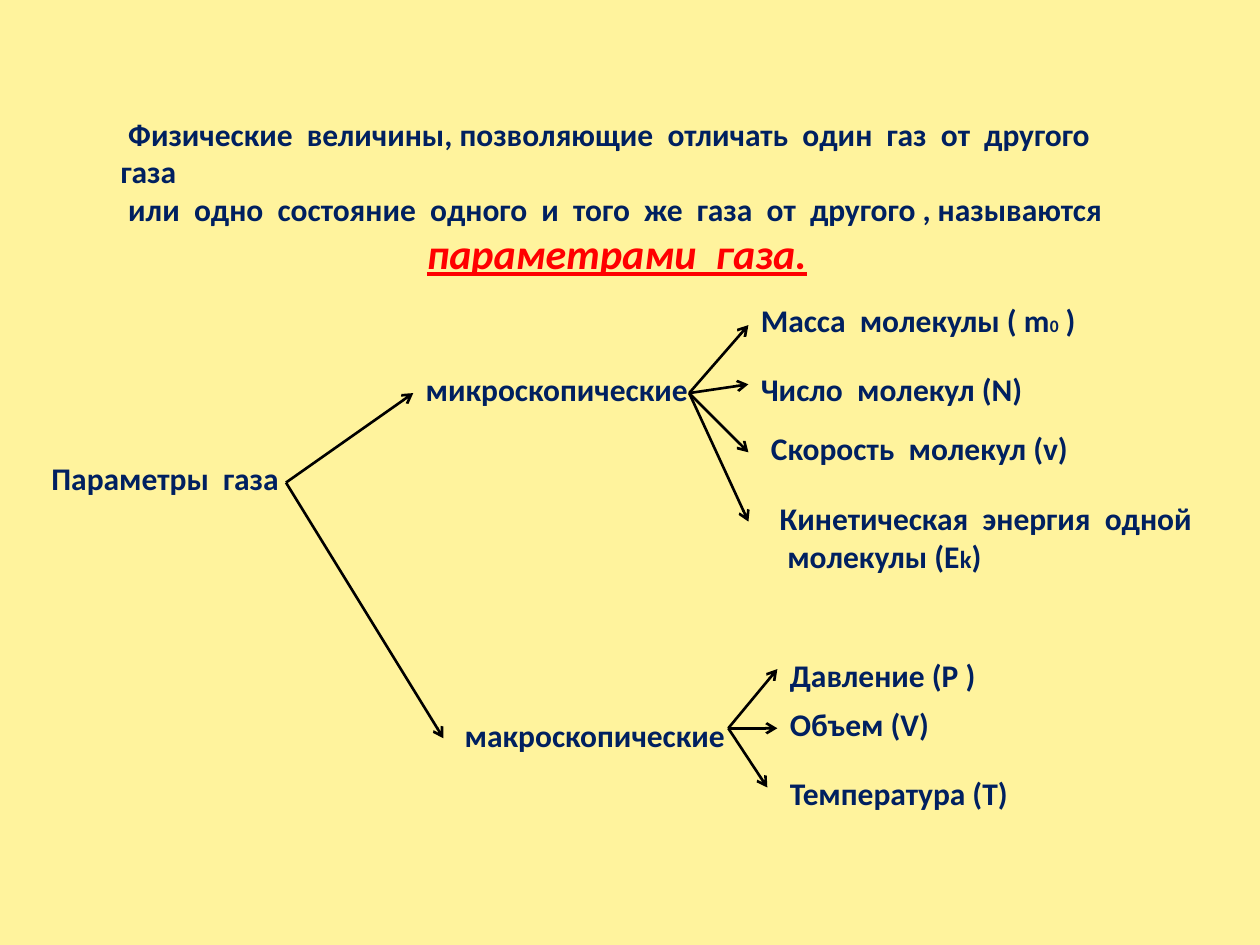
from dataclasses import dataclass

from pptx import Presentation
from pptx import util as u
from pptx.dml.color import RGBColor
from pptx.enum import shapes, text
from pptx.oxml.ns import qn
from lxml import etree


@dataclass(frozen=True)
class Theme:
    font: str = "Calibri"
    background: RGBColor = RGBColor(0xFF, 0xF3, 0x9D)
    ink: RGBColor = RGBColor(0x00, 0x20, 0x60)
    accent: RGBColor = RGBColor(0xFF, 0x00, 0x00)
    line: RGBColor = RGBColor(0, 0, 0)
    body: u.Pt = u.Pt(18)
    term: u.Pt = u.Pt(24)
    index: u.Pt = u.Pt(14)
    small_index: u.Pt = u.Pt(10)
    stroke: u.Pt = u.Pt(1.5)


THEME = Theme()
SPACE = 0.06  # first-line indent, inches
ROW = 0.4     # height of a one-line label, inches


def add_text(slide, box, paragraphs):
    """Each paragraph is a list of (text, size) runs."""
    sp = slide.shapes.add_textbox(*(u.Inches(v) for v in box))
    tf = sp.text_frame
    tf.word_wrap = True
    tf.auto_size = text.MSO_AUTO_SIZE.SHAPE_TO_FIT_TEXT
    for i, runs in enumerate(paragraphs):
        p = tf.paragraphs[0] if i == 0 else tf.add_paragraph()
        p.font.name = THEME.font
        p.font.size = THEME.body
        p.font.bold = True
        p.font.color.rgb = THEME.ink
        for content, size in runs:
            r = p.add_run()
            r.text = content
            if size != THEME.body:
                r.font.size = size
    return tf.paragraphs


def indent(p, first=0, left=0):
    pPr = p._p.get_or_add_pPr()
    pPr.set("marL", str(u.Inches(left)))
    pPr.set("indent", str(u.Inches(first)))


def add_arrow(slide, start, end):
    c = slide.shapes.add_connector(
        shapes.MSO_CONNECTOR.STRAIGHT, *(u.Inches(v) for v in (*start, *end)))
    c.line.color.rgb = THEME.line
    c.line.width = THEME.stroke
    etree.SubElement(c.line._get_or_add_ln(), qn("a:tailEnd"), type="arrow")
    etree.SubElement(c._element.spPr, qn("a:effectLst"))


def add_definition(slide, box):
    first, second, term = add_text(slide, box, [
        [("Физические  величины, позволяющие  отличать  один  газ  от  другого  газа", THEME.body)],
        [("или  одно  состояние  одного  и  того  же  газа  от  другого , называются", THEME.body)],
        [("параметрами  газа.", THEME.term)],
    ])
    indent(first, first=SPACE)
    indent(second, first=SPACE)
    indent(term, left=2.43)
    term.font.size = THEME.term
    term.font.italic = True
    term.font.underline = True
    term.font.color.rgb = THEME.accent


def add_branch(slide, box, name, root, entry, fork, leaves):
    """A named group: arrow from the root, then one arrow for each leaf."""
    add_arrow(slide, root, entry)
    add_text(slide, box, [[(name, THEME.body)]])
    for tip, leaf_box, paragraphs in leaves:
        add_arrow(slide, fork, tip)
        lines = add_text(slide, leaf_box, paragraphs)
        for p in lines[1:]:
            indent(p, first=SPACE)


def main():
    prs = Presentation()
    prs.slide_width, prs.slide_height = u.Inches(10), u.Inches(7.5)
    s = prs.slides.add_slide(prs.slide_layouts[6])
    s.background.fill.solid()
    s.background.fill.fore_color.rgb = THEME.background
    body = THEME.body

    # Definition
    add_definition(s, (0.86, 0.86, 8.44, 1.11))

    # Root of the tree
    root = (2.27, 3.83)
    add_text(s, (0.31, 3.59, 2.19, ROW), [[("Параметры  газа", body)]])

    # Microscopic parameters
    add_branch(s, (3.28, 2.89, 2.5, ROW), "микроскопические",
               root, (3.28, 3.12), (5.47, 3.12), [
        ((5.94, 2.58), (5.94, 2.34, 2.73, ROW),
         [[("Масса  молекулы ( m", body), ("0", THEME.small_index), (" )", body)]]),
        ((5.94, 3.05), (5.94, 2.89, 2.5, ROW), [[("Число  молекул (N)", body)]]),
        ((5.94, 3.59), (6.02, 3.36, 2.81, ROW), [[("Скорость  молекул (v)", body)]]),
        ((5.94, 4.14), (6.09, 3.91, 3.67, 0.71),
         [[("Кинетическая  энергия  одной", body)],
          [("молекулы (E", body), ("k", THEME.index), (")", body)]]),
    ])

    # Macroscopic parameters
    add_branch(s, (3.59, 5.63, 2.5, ROW), "макроскопические",
               root, (3.52, 5.86), (5.78, 5.78), [
        ((6.17, 5.31), (6.17, 5.16, 1.88, ROW), [[("Давление (Р )", body)]]),
        ((6.17, 5.78), (6.17, 5.55, 1.72, ROW), [[("Объем (V)", body)]]),
        ((6.09, 6.25), (6.17, 6.09, 2.03, ROW), [[("Температура (T)", body)]]),
    ])

    prs.save("out.pptx")


if __name__ == "__main__":
    main()
